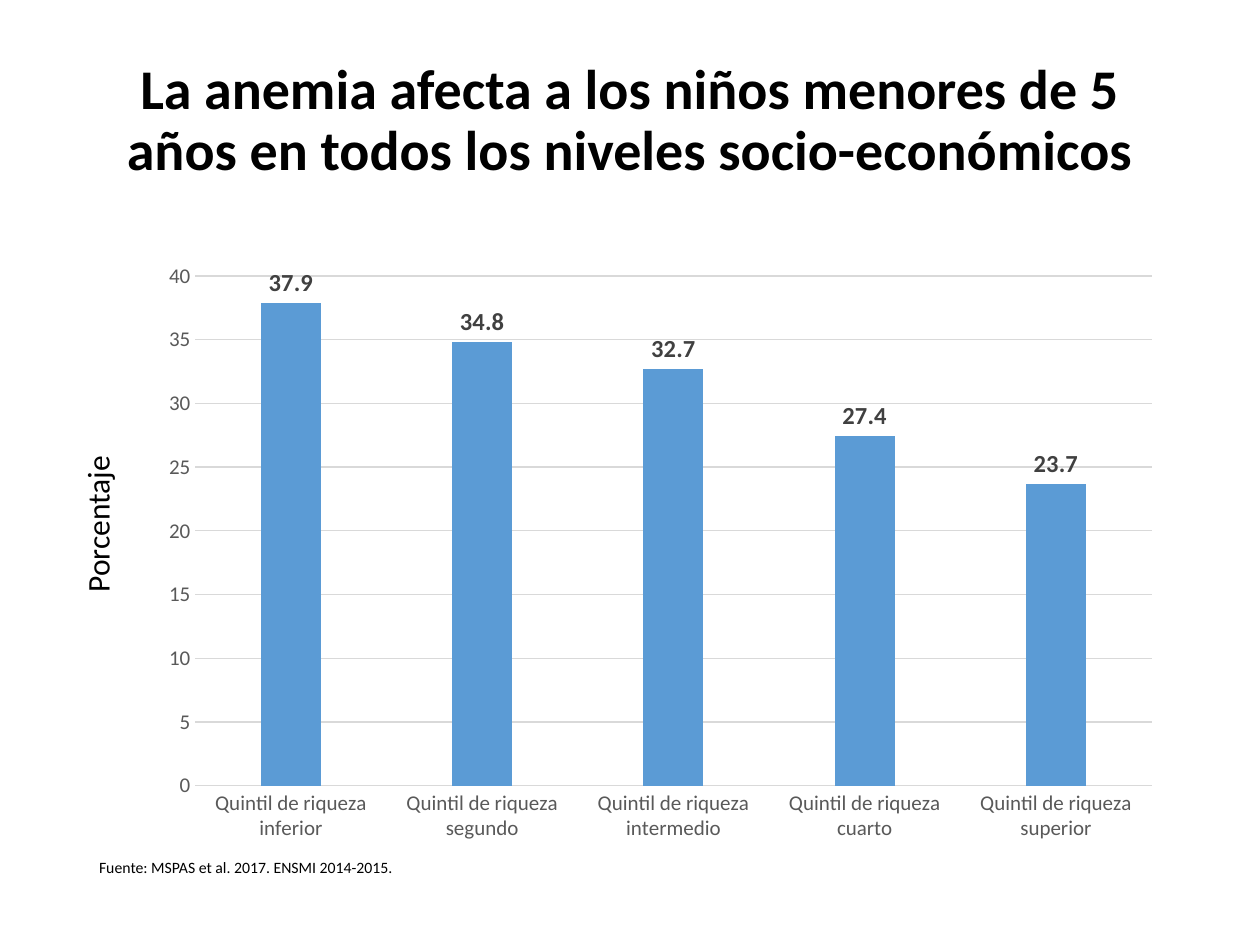
import dataclasses
import lxml.etree
import pptx
import pptx.chart.data
import pptx.dml.color
import pptx.enum.chart
import pptx.enum.shapes
import pptx.enum.text
import pptx.oxml.ns
import pptx.util

Pt = pptx.util.Pt
RGB = pptx.dml.color.RGBColor.from_string
PP_ALIGN = pptx.enum.text.PP_ALIGN
MSO_ANCHOR = pptx.enum.text.MSO_ANCHOR
XL = pptx.enum.chart


@dataclasses.dataclass(frozen=True)
class Theme:
    font: str = "Calibri"
    text: str = "000000"
    axis: str = "595959"
    label: str = "404040"
    grid: str = "D9D9D9"
    bar: str = "5B9BD5"
    paper: str = "FFFFFF"
    title_size: int = 32
    caption_size: int = 18
    label_size: int = 14
    axis_size: int = 12
    source_size: int = 9


def set_attrs(obj, values):
    for name, value in values.items():
        setattr(obj, name, value)


class SlideBuilder:
    def __init__(self, slide, theme):
        self.s = slide
        self.theme = theme

    def font(self, font, size, color, bold=False):
        set_attrs(font, {"name": self.theme.font, "size": Pt(size), "bold": bold})
        font.color.rgb = RGB(color)

    def fill_text(self, sp, text, size, bold=False, frame=None, para=None):
        tf = sp.text_frame
        set_attrs(tf, {"word_wrap": True, "vertical_anchor": MSO_ANCHOR.TOP, **(frame or {})})
        p = tf.paragraphs[0]
        set_attrs(p, {"alignment": PP_ALIGN.LEFT, **(para or {})})
        r = p.add_run()
        r.text = text
        self.font(r.font, size, self.theme.text, bold)

    def text(self, box, text, size, **style):
        sp = self.s.shapes.add_textbox(*map(Pt, box))
        self.fill_text(sp, text, size, **style)

    def side_caption(self, box, text):
        sp = self.s.shapes.add_shape(pptx.enum.shapes.MSO_SHAPE.RECTANGLE, *map(Pt, box))
        sp.rotation = 270
        sp.shadow.inherit = False
        sp.fill.solid()
        sp.fill.fore_color.rgb = RGB(self.theme.paper)
        sp.line.fill.background()
        self.fill_text(sp, text, self.theme.caption_size)

    def line(self, line):
        line.color.rgb = RGB(self.theme.grid)
        line.width = Pt(0.75)

    def axis(self, axis, values):
        set_attrs(axis, {"major_tick_mark": XL.XL_TICK_MARK.NONE,
                         "minor_tick_mark": XL.XL_TICK_MARK.NONE, **values})
        self.font(axis.tick_labels.font, self.theme.axis_size, self.theme.axis)

    def plot_area(self, chart, x, y, w, h):
        qn = pptx.oxml.ns.qn
        area = chart.plots[0]._element.getparent()
        for old in area.findall(qn("c:layout")):
            area.remove(old)
        layout = lxml.etree.Element(qn("c:layout"))
        manual = lxml.etree.SubElement(layout, qn("c:manualLayout"))
        for tag, val in (("layoutTarget", "inner"), ("xMode", "edge"), ("yMode", "edge"),
                         ("x", x), ("y", y), ("w", w), ("h", h)):
            lxml.etree.SubElement(manual, qn(f"c:{tag}")).set("val", str(val))
        area.insert(0, layout)

    def columns(self, box, categories, name, values):
        data = pptx.chart.data.CategoryChartData()
        data.categories = categories
        data.add_series(name, values)
        chart = self.s.shapes.add_chart(
            XL.XL_CHART_TYPE.COLUMN_CLUSTERED, *map(Pt, box), data).chart
        set_attrs(chart, {"has_legend": False, "has_title": False})
        self.font(chart.font, 10, self.theme.text)

        plot = chart.plots[0]
        set_attrs(plot, {"gap_width": 219, "overlap": -27,
                         "vary_by_categories": False, "has_data_labels": True})
        set_attrs(plot.data_labels, {"show_value": True,
                                     "position": XL.XL_LABEL_POSITION.OUTSIDE_END})
        self.font(plot.data_labels.font, self.theme.label_size, self.theme.label, True)
        fill = plot.series[0].format.fill
        fill.solid()
        fill.fore_color.rgb = RGB(self.theme.bar)

        self.axis(chart.category_axis, {"has_major_gridlines": False})
        self.line(chart.category_axis.format.line)
        self.axis(chart.value_axis, {"has_major_gridlines": True, "minimum_scale": 0,
                                     "maximum_scale": 40, "major_unit": 5})
        self.line(chart.value_axis.major_gridlines.format.line)
        chart.value_axis.format.line.fill.background()
        self.plot_area(chart, 0.1, 0.04, 0.88, 0.85)


def main():
    prs = pptx.Presentation()
    set_attrs(prs, {"slide_width": Pt(720), "slide_height": Pt(540)})
    theme = Theme()
    b = SlideBuilder(prs.slides.add_slide(prs.slide_layouts[6]), theme)
    left, width = 49.5, 621

    b.text((left, 28.8, width, 81.4),
           "La anemia afecta a los niños menores de 5 años en todos los niveles socio-económicos",
           theme.title_size, bold=True, frame={"vertical_anchor": MSO_ANCHOR.MIDDLE},
           para={"alignment": PP_ALIGN.CENTER, "line_spacing": 0.9})
    levels = ("inferior", "segundo", "intermedio", "cuarto", "superior")
    b.columns((left, 144, width, 342.7),
              [f"Quintil de riqueza {level}" for level in levels],
              "Porcentaje", (37.9, 34.8, 32.7, 27.4, 23.7))
    b.text((left, 486.7, 187, 18), "Fuente: MSPAS et al. 2017. ENSMI 2014-2015.",
           theme.source_size, frame={"word_wrap": False})
    b.side_caption((-30.2, 235.4, 181.4, 38.9), "Porcentaje")
    prs.save("out.pptx")


if __name__ == "__main__":
    main()
